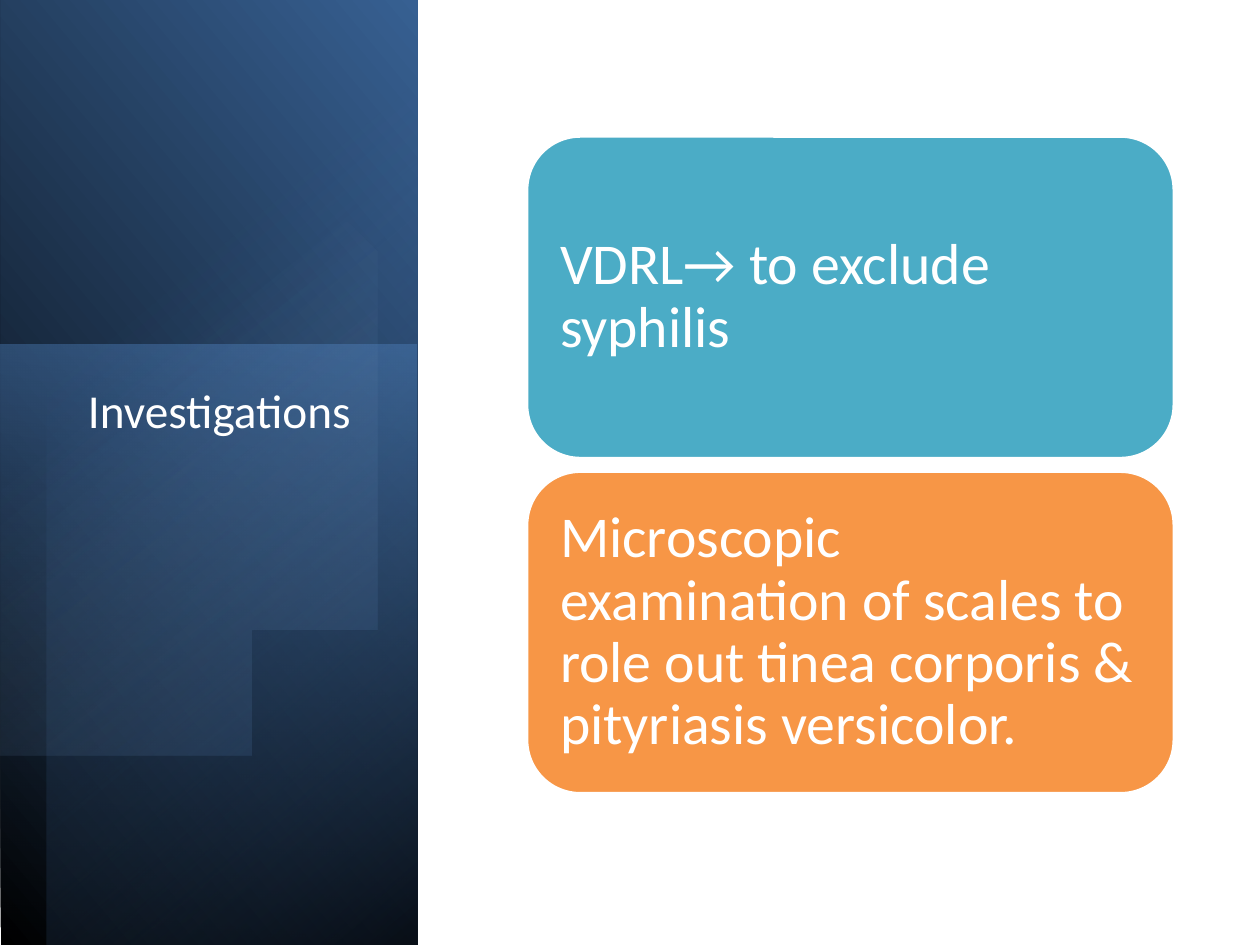
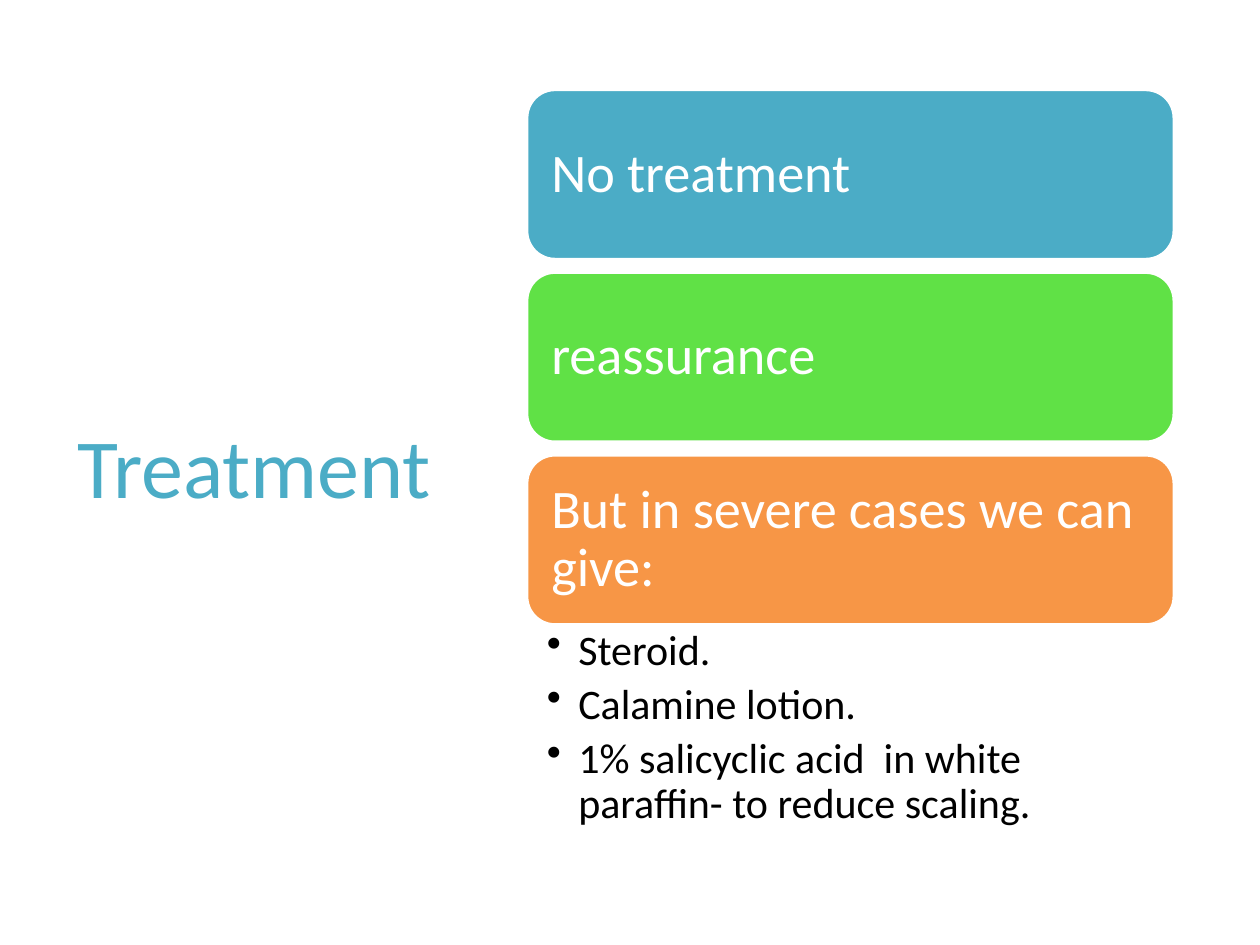
from lxml import etree
from pptx import Presentation
from pptx.dml.color import RGBColor
from pptx.enum.shapes import MSO_SHAPE
from pptx.enum.text import MSO_ANCHOR, PP_ALIGN
from pptx.oxml.ns import qn
from pptx.util import Inches, Pt

RECTANGLE, ROUNDED = MSO_SHAPE.RECTANGLE, MSO_SHAPE.ROUNDED_RECTANGLE
TOP, MIDDLE = MSO_ANCHOR.TOP, MSO_ANCHOR.MIDDLE
LEFT, CENTER = PP_ALIGN.LEFT, PP_ALIGN.CENTER

FONT = "Calibri"
COLORS = {
    "white": "FFFFFF", "black": "000000", "teal": "4BACC6",
    "green": "60E146", "orange": "F79646", "blue": "4F81BD",
    "mid_blue": "376092", "deep_blue": "254061", "pale_blue": "95B3D7",
}
CARD_LEFT, CARD_WIDTH, CARD_GAP = 4.18, 5.14, 0.1

# Oval outline: a start point, then curves of two controls and an end
OVAL_START = (1.2, 0.89)
OVAL_CURVES = [
    ((1.33, 0.88), (1.47, 0.89), (1.6, 0.91)),
    ((2.67, 1.13), (3.29, 2.47), (3, 3.89)),
    ((2.71, 5.31), (1.61, 6.28), (0.54, 6.07)),
    ((0.34, 6.02), (0.16, 5.94), (-0.01, 5.83)),
]
OVAL_EDGE = [(-0.12, 5.74), (0.09, 1.38), (0.25, 1.25)]
OVAL_CLOSE = ((0.54, 1.04), (0.87, 0.91), OVAL_START)


def color(name):
    return RGBColor.from_string(COLORS[name])


def curve_points(start, curve, steps=16):
    """Return points along a cubic curve, without its start."""
    points = []
    for step in range(1, steps + 1):
        t = step / steps
        weights = ((1 - t) ** 3, 3 * t * (1 - t) ** 2, 3 * t * t * (1 - t), t ** 3)
        corners = (start, *curve)
        points.append(tuple(sum(w * corner[axis] for w, corner in zip(weights, corners))
                            for axis in (0, 1)))
    return points


def write_text(frame, lines, size, ink="white", align=LEFT, anchor=MIDDLE,
               margins=(0.1, 0.05, 0.1, 0.05), indent=0, hanging=0,
               spacing=0.9, after=0, bullet=None):
    frame.word_wrap = True
    frame.vertical_anchor = anchor
    (frame.margin_left, frame.margin_top,
     frame.margin_right, frame.margin_bottom) = map(Inches, margins)
    for number, line in enumerate(lines):
        para = frame.add_paragraph() if number else frame.paragraphs[0]
        para.alignment, para.line_spacing, para.space_after = align, spacing, Pt(after)
        props = para._p.get_or_add_pPr()
        props.set("marL", str(Inches(indent)))
        props.set("indent", str(Inches(-hanging)))
        if bullet:
            etree.SubElement(props, qn("a:buChar"), char=bullet)
        span = para.add_run()
        span.text = line
        span.font.name, span.font.size = FONT, Pt(size)
        span.font.color.rgb = color(ink)


class SlideBuilder:
    def __init__(self):
        self.deck = Presentation()
        self.deck.slide_width, self.deck.slide_height = Inches(10), Inches(7.5)
        self.page = None

    def new_page(self):
        self.page = self.deck.slides.add_slide(self.deck.slide_layouts[6])
        self.page.background.fill.solid()
        self.page.background.fill.fore_color.rgb = color("white")

    def text(self, place, lines, **style):
        box = self.page.shapes.add_textbox(*map(Inches, place))
        write_text(box.text_frame, lines, **style)

    def gradient(self, shape, stops, angle):
        """Fill with two stops of (position, color, opacity); angle is clockwise."""
        shape.shadow.inherit = False
        shape.line.fill.background()
        shape.fill.gradient()
        shape.fill.gradient_angle = 360 - angle
        for stop, (position, name, _) in zip(shape.fill.gradient_stops, stops):
            stop.position = position / 100
            stop.color.rgb = color(name)
        tints = list(shape._element.spPr.iter(qn("a:srgbClr")))
        for tint, (_, _, opacity) in zip(tints, stops):
            if opacity < 100:
                etree.SubElement(tint, qn("a:alpha"), val=str(opacity * 1000))

    def gradient_panel(self, place, stops, angle, rotation, flipped=False):
        panel = self.page.shapes.add_shape(RECTANGLE, *map(Inches, place))
        panel.rotation = rotation
        if flipped:
            panel._element.spPr.find(qn("a:xfrm")).set("flipH", "1")
        self.gradient(panel, stops, angle)

    def gradient_outline(self, points, stops, angle):
        builder = self.page.shapes.build_freeform(
            *points[0], scale=float(Inches(1)))
        builder.add_line_segments(points[1:], close=True)
        self.gradient(builder.convert_to_shape(), stops, angle)

    def cards(self, top, height, size, margin, entries):
        for row, (label, fill) in enumerate(entries):
            place = (CARD_LEFT, top + row * (height + CARD_GAP), CARD_WIDTH, height)
            card = self.page.shapes.add_shape(ROUNDED, *map(Inches, place))
            card.shadow.inherit = False
            card.fill.solid()
            card.fill.fore_color.rgb = color(fill)
            card.line.color.rgb = color("white")
            card.line.width = Pt(2)
            write_text(card.text_frame, [label], size, margins=(margin,) * 4)


def build_investigations(show):
    show.new_page()
    # Blue side band
    show.gradient_panel((-2.1, 2.1, 7.52, 3.31),
                        [(0, "black", 100), (100, "mid_blue", 100)],
                        310, rotation=90, flipped=True)
    show.gradient_panel((-0.73, 3.46, 4.76, 3.31),
                        [(0, "blue", 50), (100, "deep_blue", 0)],
                        190, rotation=270)
    show.gradient_panel((-1.91, 2.28, 7.5, 2.94),
                        [(0, "black", 59), (69, "blue", 0)],
                        220, rotation=270, flipped=True)
    oval = [OVAL_START]
    for curve in OVAL_CURVES:
        oval += curve_points(oval[-1], curve)
    oval += OVAL_EDGE
    oval += curve_points(oval[-1], OVAL_CLOSE)[:-1]
    show.gradient_outline(oval, [(39, "pale_blue", 0), (100, "mid_blue", 26)], 52)
    # Title and cards
    show.text((0.54, 3.03, 2.36, 3.36), ["Investigations"], size=27,
              anchor=TOP, indent=0.06)
    show.cards(1.08, 2.56, 33, 0.14, [
        ("VDRL→ to exclude syphilis", "teal"),
        ("Microscopic examination of scales to role out tinea corporis & "
         "pityriasis versicolor.", "orange"),
    ])


def build_treatment(show):
    show.new_page()
    # Title and cards
    show.text((0.43, 0.68, 3.12, 6.02), ["Treatment"], size=48, ink="teal",
              align=CENTER, indent=0.06, spacing=1)
    show.cards(0.71, 1.35, 31, 0.13, [
        ("No treatment", "teal"),
        ("reassurance", "green"),
        ("But in severe cases we can give:", "orange"),
    ])
    # Medicines for severe cases
    show.text((CARD_LEFT, 4.95, CARD_WIDTH, 1.72),
              ["Steroid.", "Calamine lotion.",
               "1% salicyclic acid  in white paraffin- to reduce scaling."],
              size=24, ink="black", anchor=TOP, margins=(0.16, 0.04, 0.24, 0.04),
              indent=0.25, hanging=0.25, after=5, bullet="•")


def main():
    show = SlideBuilder()
    build_investigations(show)
    build_treatment(show)
    show.deck.save("out.pptx")


if __name__ == "__main__":
    main()
